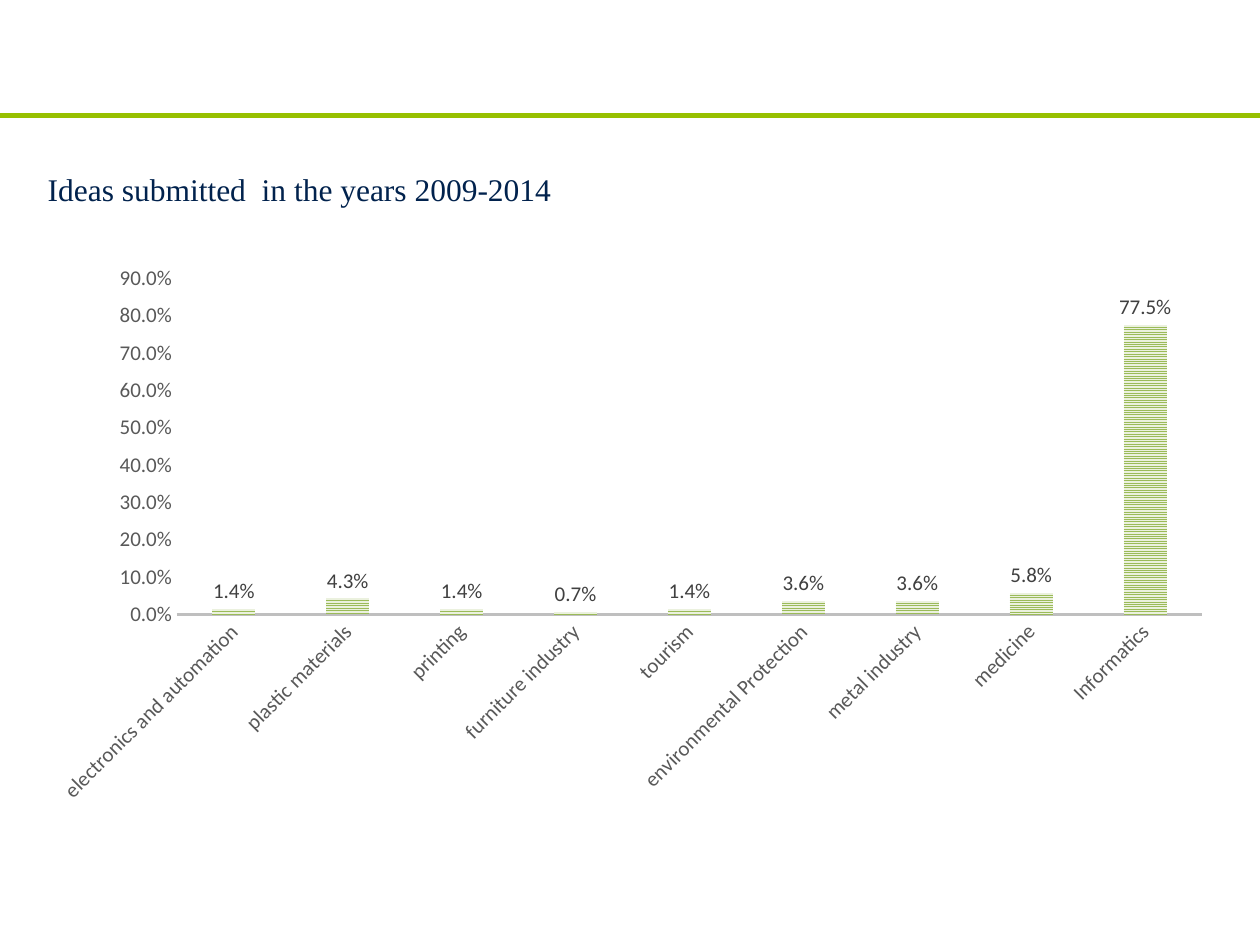
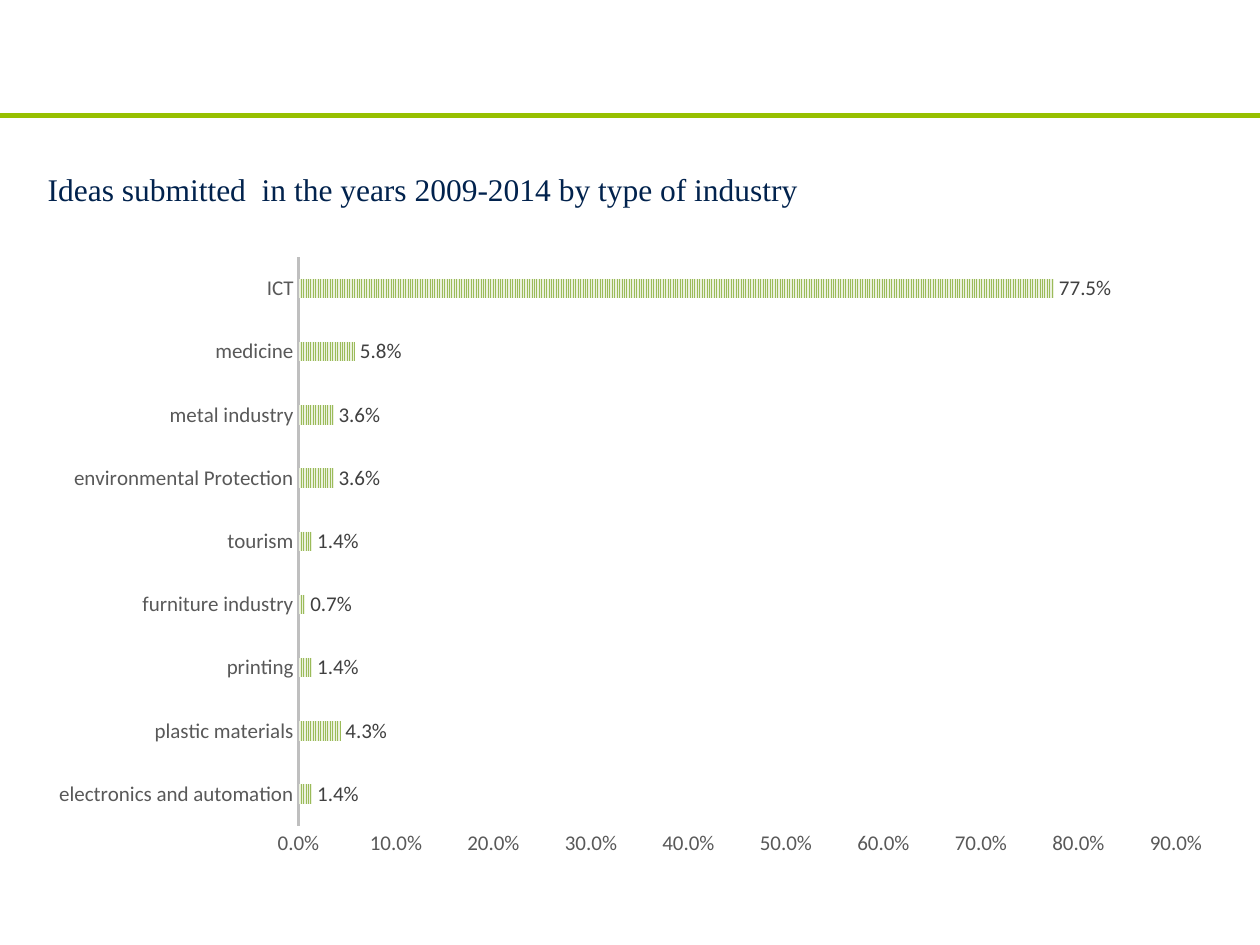
"""Build two slides that chart submitted ideas by industry."""
from dataclasses import dataclass

from lxml import etree
from pptx import Presentation
from pptx import util as u
from pptx.chart import data as cd
from pptx.dml import color as dc
from pptx.enum import chart as ec
from pptx.enum import dml as ed
from pptx.enum import shapes as es
from pptx.enum import text as et
from pptx.oxml import ns

PX = 9144


@dataclass(frozen=True)
class Theme:
    """Colours, fonts and type sizes of the deck."""
    band: str = "97C000"
    title: str = "01224D"
    axis: str = "BFBFBF"
    tick: str = "595959"
    label: str = "404040"
    bar: str = "9BBB59"
    pale: str = "EBF1DE"
    serif: str = "Times New Roman"
    sans: str = "Calibri"
    big: int = 18
    small: int = 12
    base: int = 10


T = Theme()
FIELDS = ["electronics and automation", "plastic materials", "printing",
          "furniture industry", "tourism", "environmental Protection",
          "metal industry", "medicine"]
SHARES = [0.014, 0.043, 0.014, 0.007, 0.014, 0.036, 0.036, 0.058, 0.775]
PERCENT = {"number_format": "0.0%", "number_format_is_linked": False}


def emu(*sizes):
    """Turn px into EMU."""
    return [u.Emu(size * PX) for size in sizes]


def rgb(code):
    """Turn a hex code into a colour."""
    return dc.RGBColor.from_string(code)


def put(item, **vals):
    """Set each named value on the item."""
    for name, val in vals.items():
        setattr(item, name, val)


def style(font, face, size, hue):
    """Give a font its face, size and colour."""
    put(font, name=face, size=u.Pt(size))
    font.color.rgb = rgb(hue)


def draw_band(slide, box):
    """Draw the green rule along the top of the box."""
    left, top, width, _ = box
    rule = slide.shapes.add_connector(
        es.MSO_CONNECTOR.STRAIGHT, *emu(left, top, left + width, top))
    rule.line.color.rgb = rgb(T.band)
    rule.line.width = u.Pt(2.75)
    etree.SubElement(rule.element.spPr, ns.qn("a:effectLst"))


def draw_title(slide, box, words):
    """Write the slide title in the box."""
    frame = slide.shapes.add_textbox(*emu(*box)).text_frame
    put(frame, word_wrap=True, auto_size=et.MSO_AUTO_SIZE.SHAPE_TO_FIT_TEXT)
    para = frame.paragraphs[0]
    put(para, text=words, line_spacing=1.5)
    style(para.runs[0].font, T.serif, T.big, T.title)


def style_axes(chart):
    """Style both axes, leaving only the category line."""
    for axis in (chart.category_axis, chart.value_axis):
        put(axis, has_major_gridlines=False, has_minor_gridlines=False,
            major_tick_mark=ec.XL_TICK_MARK.NONE,
            minor_tick_mark=ec.XL_TICK_MARK.NONE)
        style(axis.tick_labels.font, T.sans, T.small, T.tick)
    line = chart.category_axis.format.line
    line.color.rgb = rgb(T.axis)
    line.width = u.Pt(1.5)
    value = chart.value_axis
    value.format.line.fill.background()
    put(value, minimum_scale=0, maximum_scale=0.9, major_unit=0.1)
    put(value.tick_labels, **PERCENT)


def draw_chart(slide, box, kind, last, gap, lap, weave, turn):
    """Place a chart of idea shares in the box."""
    data = cd.CategoryChartData(number_format="0.0%")
    data.categories = FIELDS + [last]
    data.add_series("Series 1", SHARES)
    chart = slide.shapes.add_chart(kind, *emu(*box), data).chart
    put(chart, has_title=False, has_legend=False)
    style(chart.font, T.sans, T.base, "000000")
    style_axes(chart)
    if turn:
        for body in chart.element.xpath("//c:catAx/c:txPr/a:bodyPr"):
            body.set("rot", str(turn * 60000))
            body.set("vert", "horz")
    plot = chart.plots[0]
    put(plot, gap_width=gap, overlap=lap, vary_by_categories=False)
    series = plot.series[0]
    series.invert_if_negative = False
    fill = series.format.fill
    fill.patterned()
    fill.pattern = weave
    fill.fore_color.rgb = rgb(T.bar)
    fill.back_color.rgb = rgb(T.pale)
    labels = series.data_labels
    put(labels, show_value=True,
        position=ec.XL_LABEL_POSITION.OUTSIDE_END, **PERCENT)
    style(labels.font, T.sans, T.small, T.label)


def add_slide(deck, words, top, height, **look):
    """Add a slide with band, title and chart."""
    slide = deck.slides.add_slide(deck.slide_layouts[6])
    draw_band(slide, (0, 92, 1000, 0))
    draw_title(slide, (28, 115, 945, 50), words)
    draw_chart(slide, (28, top, 945, height), **look)


def main():
    """Build and save the deck."""
    deck = Presentation()
    deck.slide_width, deck.slide_height = emu(1000, 750)
    head = "Ideas submitted  in the years 2009-2014"
    add_slide(deck, head, 202, 444,
              kind=ec.XL_CHART_TYPE.COLUMN_CLUSTERED, last="Informatics",
              gap=164, lap=-22, weave=ed.MSO_PATTERN.NARROW_HORIZONTAL,
              turn=-45)
    add_slide(deck, head + " by type of industry", 194, 495,
              kind=ec.XL_CHART_TYPE.BAR_CLUSTERED, last="ICT",
              gap=227, lap=-48, weave=ed.MSO_PATTERN.NARROW_VERTICAL,
              turn=0)
    deck.save("out.pptx")


if __name__ == "__main__":
    main()
